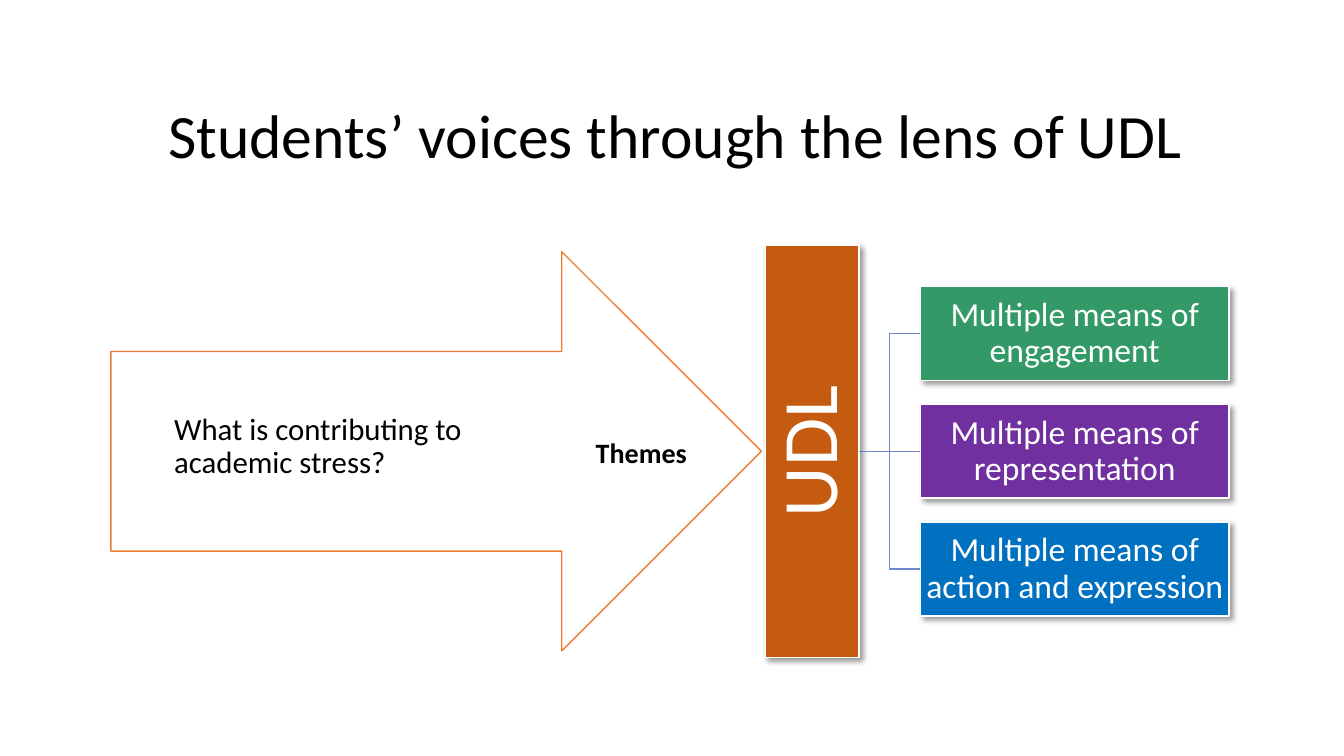
import pptx
import pptx.dml.color
import pptx.enum.shapes
import pptx.enum.text
import pptx.oxml
import pptx.oxml.ns
import pptx.util

THEME = {
    "font": "Calibri",
    "black": "000000", "white": "FFFFFF", "orange": "ED7D31", "rust": "C55A11",
    "green": "339966", "purple": "7030A0", "blue": "0070C0", "link": "6D89CB",
    "title": 44, "question": 22, "themes": 20, "udl": 56, "means": 24,
    "line": 1,
}
SHADOW = (
    f'<a:effectLst {pptx.oxml.ns.nsdecls("a")}>'
    '<a:outerShdw blurRad="50800" dist="38100" dir="2700000" algn="tl" rotWithShape="0">'
    '<a:srgbClr val="000000"><a:alpha val="40000"/></a:srgbClr>'
    '</a:outerShdw></a:effectLst>'
)
NO_EFFECT = f'<a:effectLst {pptx.oxml.ns.nsdecls("a")}/>'
SHAPE = pptx.enum.shapes.MSO_SHAPE
CONNECTOR = pptx.enum.shapes.MSO_CONNECTOR
ALIGN = pptx.enum.text.PP_ALIGN
ANCHOR = pptx.enum.text.MSO_ANCHOR

deck = pptx.Presentation()
deck.slide_width = pptx.util.Inches(13.33)
deck.slide_height = pptx.util.Inches(7.5)
slide = deck.slides.add_slide(deck.slide_layouts[6])


def color(name):
    return pptx.dml.color.RGBColor.from_string(THEME[name])


def add_part(left, top, width, height, text="", size="means", ink="black",
             kind=None, fill=None, edge="white", inset=None):
    """Add a text box, or a preset shape of the given kind; lengths are % of the slide."""
    across, down = deck.slide_width / 100, deck.slide_height / 100
    place = [int(n) for n in (left * across, top * down, width * across, height * down)]
    if kind is None:
        part = slide.shapes.add_textbox(*place)
    else:
        part = slide.shapes.add_shape(kind, *place)
        part.shadow.inherit = False
        part.fill.solid()
        part.fill.fore_color.rgb = color(fill)
        part.line.color.rgb = color(edge)
        part.line.width = pptx.util.Pt(THEME["line"])
    frame = part.text_frame
    frame.word_wrap = True
    if inset is not None:
        frame.margin_left = frame.margin_right = pptx.util.Inches(inset)
        frame.margin_top = frame.margin_bottom = pptx.util.Inches(inset)
    if text:
        paragraph = frame.paragraphs[0]
        paragraph.text = text
        paragraph.line_spacing = 0.9
        paragraph.font.name = THEME["font"]
        paragraph.font.size = pptx.util.Pt(THEME[size])
        paragraph.font.color.rgb = color(ink)
    return part


# Title
title = add_part(11.78, 13.47, 80.8, 9.87, "Students’ voices through the lens of UDL", "title")
title.text_frame.vertical_anchor = ANCHOR.BOTTOM

# Arrow with the question and the themes
axis = 59.7
arrow_height = 52.8
add_part(8.25, axis - arrow_height / 2, 48.4, arrow_height,
         kind=SHAPE.RIGHT_ARROW, fill="white", edge="orange")
question = add_part(11.78, 54.13, 31.06, 19.6,
                    "What is contributing to academic stress?", "question")
question_line = question.text_frame.paragraphs[0]
question_line.space_before = pptx.util.Pt(3.1)
question_line._p.get_or_add_pPr().set("marL", str(pptx.util.Inches(0.06)))
themes = add_part(43.59, 56.93, 9.15, 5.87, "Themes", "themes")
themes.text_frame.paragraphs[0].font.bold = True
themes.text_frame.paragraphs[0].line_spacing = 1.0

# UDL bar, its text running upwards
bar_height = 54.53
udl = add_part(56.94, axis - bar_height / 2, 6.98, bar_height, "UDL", "udl", "white",
               SHAPE.RECTANGLE, "rust", inset=0.04)
udl.text_frame._txBody.bodyPr.set("vert", "vert270")

# Three means, one step apart around the axis
means = [("Multiple means of engagement", "green"),
         ("Multiple means of representation", "purple"),
         ("Multiple means of action and expression", "blue")]
box_height, step = 12.4, 15.57
boxes = [add_part(68.49, axis - box_height / 2 + (row - 1) * step, 22.96, box_height,
                  text, "means", "white", SHAPE.RECTANGLE, fill, inset=0.02)
         for row, (text, fill) in enumerate(means)]

# Shared look of the bar and the boxes
for block in [udl, *boxes]:
    block.text_frame.vertical_anchor = ANCHOR.MIDDLE
    block.text_frame.paragraphs[0].alignment = ALIGN.CENTER
    properties = block._element.spPr
    properties.replace(properties.find(pptx.oxml.ns.qn("a:effectLst")),
                       pptx.oxml.parse_xml(SHADOW))

# Links from the bar to each box
for box, route in zip(boxes, (CONNECTOR.ELBOW, CONNECTOR.STRAIGHT, CONNECTOR.ELBOW)):
    link = slide.shapes.add_connector(route, 0, 0, 0, 0)
    link.begin_connect(udl, 3)
    link.end_connect(box, 1)
    link.line.color.rgb = color("link")
    link.line.width = pptx.util.Pt(THEME["line"])
    link._element.spPr.append(pptx.oxml.parse_xml(NO_EFFECT))

deck.save("out.pptx")
